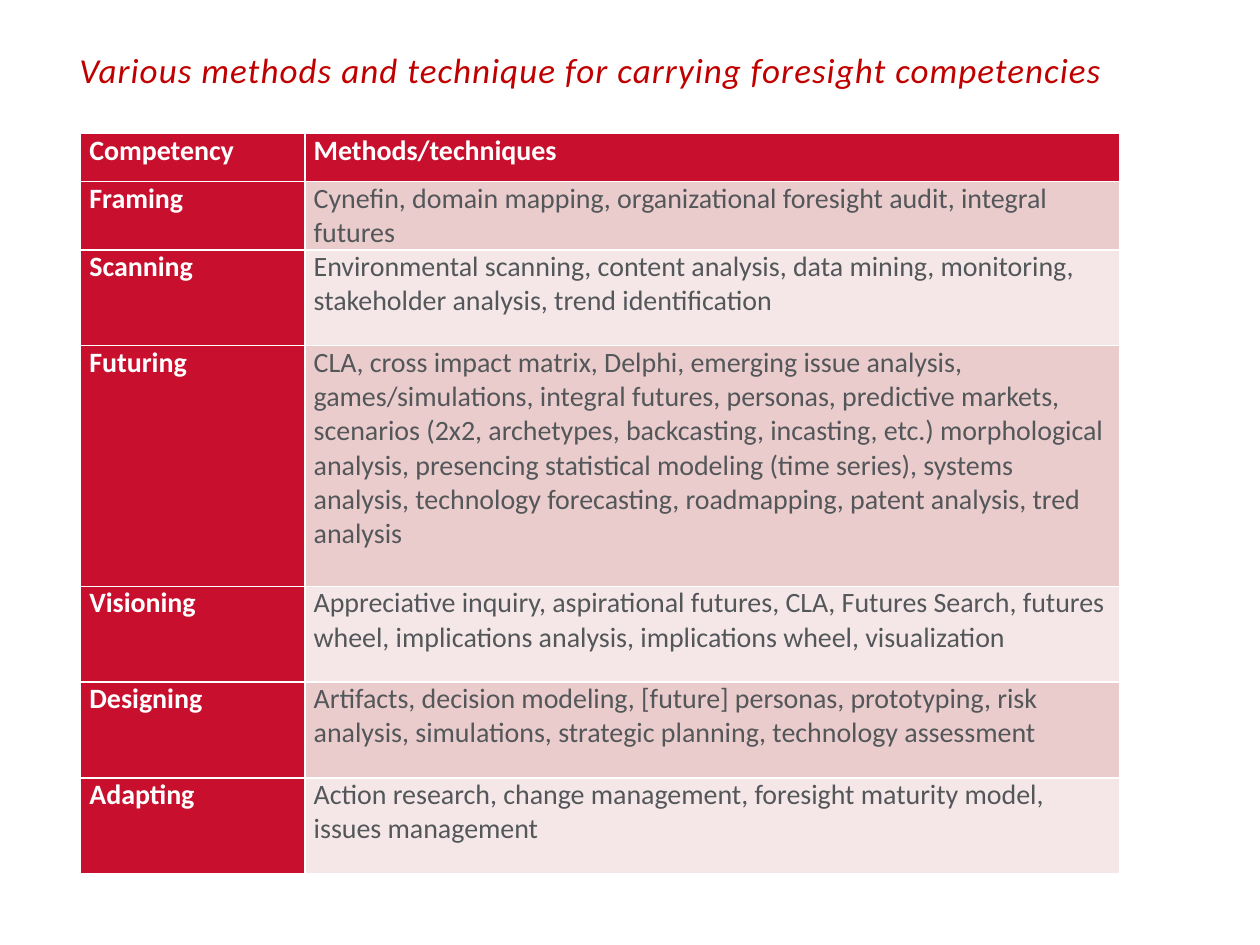
from pptx import Presentation
from pptx.dml.color import RGBColor
from pptx.enum.text import MSO_ANCHOR, PP_ALIGN
from pptx.util import Inches, Pt

TITLE_RED = RGBColor(0xC0, 0x00, 0x00)
CRIMSON = RGBColor(0xC8, 0x10, 0x2E)
ROSE = RGBColor(0xEB, 0xCC, 0xCD)
PALE_ROSE = RGBColor(0xF5, 0xE7, 0xE8)
WHITE = RGBColor(0xFF, 0xFF, 0xFF)
GREY = RGBColor(0x53, 0x57, 0x5A)

TITLE = "Various methods and technique for carrying foresight competencies"
# Competency, methods, row height
COMPETENCIES = [
    ("Competency", "Methods/techniques", 0.38),
    ("Framing", "Cynefin, domain mapping, organizational foresight audit, "
     "integral futures", 0.38),
    ("Scanning", "Environmental scanning, content analysis, data mining, "
     "monitoring, stakeholder analysis, trend identification", 0.76),
    ("Futuring", "CLA, cross impact matrix, Delphi, emerging issue analysis, "
     "games/simulations, integral futures, personas, predictive markets, "
     "scenarios (2x2, archetypes, backcasting, incasting, etc.) "
     "morphological analysis, presencing statistical modeling (time series), "
     "systems analysis, technology forecasting, roadmapping, patent "
     "analysis, tred analysis", 1.91),
    ("Visioning", "Appreciative inquiry, aspirational futures, CLA, Futures "
     "Search, futures wheel, implications analysis, implications wheel, "
     "visualization", 0.76),
    ("Designing", "Artifacts, decision modeling, [future] personas, "
     "prototyping, risk analysis, simulations, strategic planning, "
     "technology assessment", 0.76),
    ("Adapting", "Action research, change management, foresight maturity "
     "model, issues management", 0.76),
]


class ForesightSlide:
    """Holds the text style and the current slide."""

    font_name = "Calibri"

    def __init__(self, prs):
        self.slide = prs.slides.add_slide(prs.slide_layouts[5])

    def add_text(self, frame, text, size, color, **font_values):
        run = frame.paragraphs[0].add_run()
        run.text = text
        font_values.update(name=self.font_name, size=Pt(size))
        for name, value in font_values.items():
            setattr(run.font, name, value)
        run.font.color.rgb = color
        return run

    def title(self, text, left, top, width, height):
        heading = self.slide.shapes.title
        box = dict(left=left, top=top, width=width, height=height)
        for name, value in box.items():
            setattr(heading, name, Inches(value))
        frame = heading.text_frame
        frame.vertical_anchor = MSO_ANCHOR.MIDDLE
        frame.paragraphs[0].alignment = PP_ALIGN.LEFT
        frame.paragraphs[0].line_spacing = 1.07
        run = self.add_text(frame, text, 20, TITLE_RED, italic=True)
        # Letter spacing of 0.6 pt
        run._r.get_or_add_rPr().set("spc", "60")

    def cell(self, cell, text, fill, color, bold):
        margins = dict(margin_left=0.07, margin_right=0.07,
                       margin_top=0, margin_bottom=0)
        for name, value in margins.items():
            setattr(cell, name, Inches(value))
        cell.fill.solid()
        cell.fill.fore_color.rgb = fill
        self.add_text(cell.text_frame, text, 16, color, bold=bold)

    def table(self, rows, left, top, widths):
        height = sum(row[-1] for row in rows)
        table = self.slide.shapes.add_table(
            len(rows), len(widths), Inches(left), Inches(top),
            Inches(sum(widths)), Inches(height)).table
        table.first_col = True
        for column, width in zip(table.columns, widths):
            column.width = Inches(width)
        for r, (*texts, row_height) in enumerate(rows):
            table.rows[r].height = Inches(row_height)
            for c, text in enumerate(texts):
                heading = r == 0 or c == 0
                band = ROSE if r % 2 else PALE_ROSE
                self.cell(table.cell(r, c), text,
                          CRIMSON if heading else band,
                          WHITE if heading else GREY, heading)


def main():
    prs = Presentation()
    prs.slide_width, prs.slide_height = Inches(10), Inches(7.5)
    foresight = ForesightSlide(prs)

    # Title
    foresight.title(TITLE, 0.53, 0, 8.95, 1.08)

    # Competencies and their methods
    foresight.table(COMPETENCIES, 0.64, 1.06, (1.78, 6.47))

    prs.save("out.pptx")


if __name__ == "__main__":
    main()
